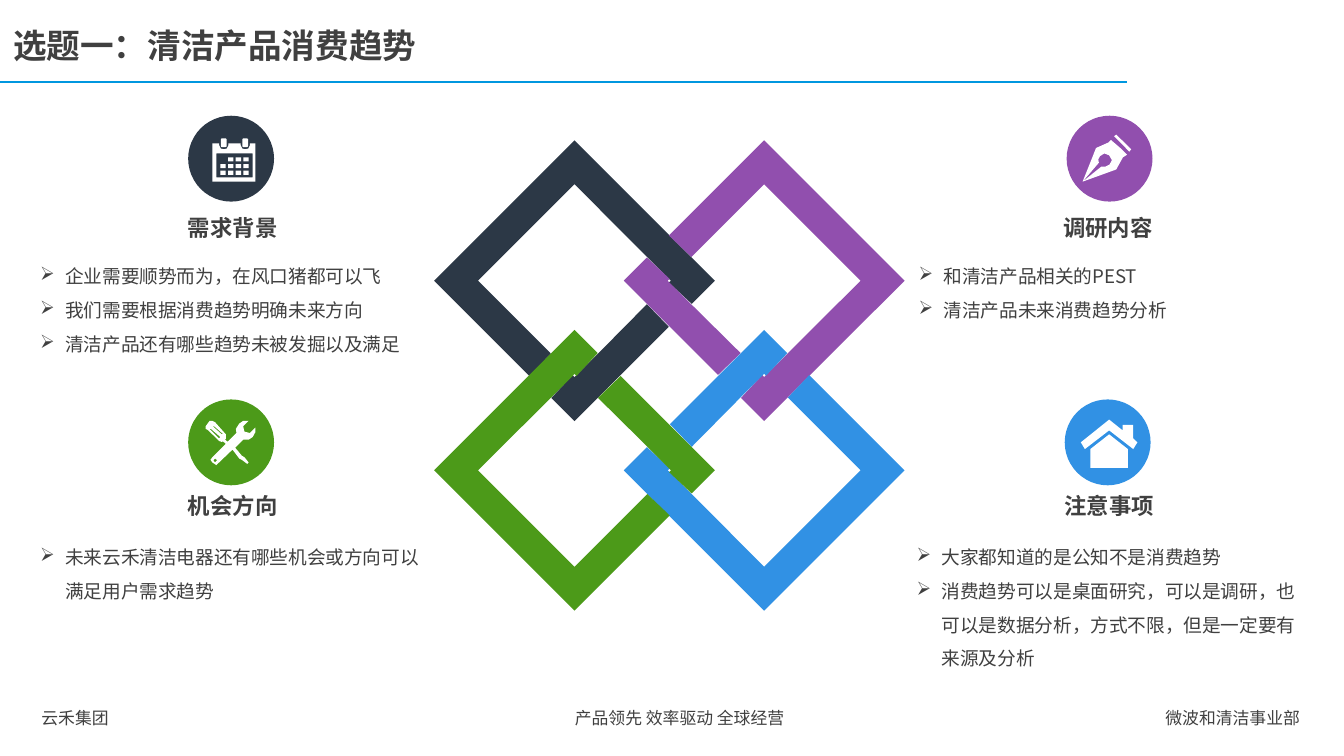
from lxml.etree import SubElement
from pptx import Presentation
from pptx.dml.color import RGBColor
from pptx.enum.shapes import MSO_CONNECTOR as Connector, MSO_SHAPE as Shape
from pptx.enum.text import PP_ALIGN as Align
from pptx.oxml.ns import qn
from pptx.util import Pt

FONT = "Noto Sans CJK SC"
INK, WHITE, ACCENT = "404040", "FFFFFF", "0097DF"
NAVY, PURPLE, BLUE, GREEN = "2C3846", "914FAE", "3191E4", "4C9A19"
BADGE = 46

PEN_NIB = [(28.8, 17.3), (23.8, 13), (22.3, 14.4), (15.8, 17.3), (8.6, 35.3), (17.3, 25.2),
           (17, 23.3), (18, 21.6), (20.3, 20.2), (22.8, 21.2), (24.3, 23.8), (23, 26.2),
           (20.8, 27.3), (18.7, 27.2), (8.6, 35.3), (26.6, 28.8), (30.2, 22.3), (32.4, 20.9)]
PEN_CAP = [(26.6, 10.1), (34.6, 18), (33.6, 19.2), (25.4, 11)]
HOUSE_BODY = [(13.7, 26.6), (13.7, 36.7), (33.8, 36.7), (33.8, 26.6), (23.8, 18.7)]
HOUSE_ROOF = [(36.7, 20.9), (36.7, 13.7), (31, 13.7), (31, 16.6), (23.8, 10.8), (8.6, 23),
              (10.8, 26.6), (23.8, 16.6), (36.7, 26.6), (38.9, 23)]
TOOLS = [(9.4, 14.4), (11.5, 11.5), (13, 11.5), (14.4, 12.2), (20.2, 18.7), (20.2, 21.2),
         (19.8, 21.6), (21.2, 22.7), (25.9, 18), (25.6, 15.8), (27.4, 13), (29.5, 11.5),
         (32.4, 11.5), (29.5, 14.4), (30.2, 17.3), (33.1, 18), (36, 15.1), (36, 17.6),
         (34.6, 20.2), (32.4, 21.6), (29.5, 21.6), (25.2, 25.9), (28.8, 30.2), (30.2, 31),
         (32.4, 33.8), (31.7, 34.6), (28.8, 32.4), (27.4, 31.7), (23.8, 26.9), (16.6, 33.8),
         (15.1, 35.2), (13, 33.8), (12, 32.4), (13, 31), (20.2, 23.8), (18.7, 22.5),
         (18, 22.8), (16.6, 22.3), (10.8, 16.6), (9.4, 15.8)]
TOOL_HOLES = [[(14.4, 31.7), (13.5, 32.6), (14.4, 33.8), (15.6, 32.6)],
              [(18, 18.7), (18.7, 18.5), (13.7, 14.2), (13.4, 14.6)],
              [(16.6, 20.9), (17.3, 20.2), (12.2, 15.8), (11.5, 15.8)]]
CALENDAR = [(13, 14.8), (16.6, 14.8), (16.6, 15.8), (17.5, 17.6), (19.1, 18), (20.7, 17.6),
            (21.6, 15.8), (21.6, 14.8), (28.1, 14.8), (28.1, 15.8), (29, 17.6), (30.6, 18),
            (32.2, 17.6), (33.1, 15.8), (33.1, 14.8), (36, 14.8), (36, 35.3), (13, 35.3)]
CALENDAR_WINDOW = [(15.1, 20.2), (34.6, 20.2), (34.6, 33.1), (15.1, 33.1)]

RING_ARC = [(75.2, 0), (62.8, 12.4), (50.5, 1), (51.7, 0), (50.5, -1), (0, -51.7),
            (-51.7, 0), (-12.7, 39), (-24.2, 51), (-75.2, 0), (0, -75.2)]
RING_CORNER = [(12.4, 39.3), (1, 50.7), (0, 51.7), (-1, 50.7), (-12.4, 62.8), (0, 75.2),
               (50.5, 24.7), (38.8, 12.6)]


def rgb(color):
    """Turn a hex string into a colour."""
    return RGBColor.from_string(color)


def paint(shape, color):
    """Give a shape a plain fill without line or shadow."""
    shape.shadow.inherit = False
    shape.fill.solid()
    shape.fill.fore_color.rgb = rgb(color)
    shape.line.fill.background()


def add_preset(slide, kind, left, top, width, height, color):
    """Draw a filled preset shape."""
    paint(slide.shapes.add_shape(kind, Pt(left), Pt(top), Pt(width), Pt(height)), color)


def add_outline(slide, left, top, contours, color):
    """Draw closed contours as one filled freeform."""
    loops = [[(Pt(left + x), Pt(top + y)) for x, y in contour] for contour in contours]
    builder = slide.shapes.build_freeform(*loops[0][0])
    builder.add_line_segments(loops[0][1:], close=True)
    for loop in loops[1:]:
        builder.move_to(*loop[0])
        builder.add_line_segments(loop[1:], close=True)
    paint(builder.convert_to_shape(), color)


def add_text(slide, box, lines, size, bold=False, wrap=True, bullet=None, align=Align.LEFT):
    """Write paragraphs in a box, with bullets if a bullet sign is given."""
    frame = slide.shapes.add_textbox(*map(Pt, box)).text_frame
    frame.word_wrap = wrap
    frame.text = "\n".join(lines)
    for paragraph in frame.paragraphs:
        paragraph.alignment = align
        if bullet:
            properties = paragraph._p.get_or_add_pPr()
            properties.set("marL", str(Pt(13.5)))
            properties.set("indent", str(-Pt(13.5)))
            SubElement(properties, qn("a:buChar")).set("char", bullet)
            paragraph.line_spacing = 1.5
        for run in paragraph.runs:
            run.font.size, run.font.bold, run.font.name = Pt(size), bold, FONT
            run.font.color.rgb = rgb(INK)
            SubElement(run.font._element, qn("a:ea")).set("typeface", FONT)


def add_header(slide, left, top, width):
    """Place the title above its rule."""
    rule_y = Pt(top + 43.9)
    rule = slide.shapes.add_connector(Connector.STRAIGHT, Pt(left), rule_y, Pt(left + width), rule_y)
    rule.line.color.rgb = rgb(ACCENT)
    rule.line.width = Pt(1)
    SubElement(rule._element.spPr, qn("a:effectLst"))
    add_text(slide, (left, top + 10, 232.5, 29), ["选题一：清洁产品消费趋势"], 18, True, False)


def add_footer(slide, left, top, width):
    """Place the three footer labels."""
    add_text(slide, (left, top, 54, 18), ["云禾集团"], 9)
    add_text(slide, (left + 279.4, top, 139, 18), ["产品领先 效率驱动 全球经营"], 9, align=Align.CENTER)
    add_text(slide, (left + width - 92, top, 92, 18), ["微波和清洁事业部"], 9, align=Align.RIGHT)


def add_rings(slide, left, top, pitch=101.6, radius=75.2):
    """Interlock four diamonds, each a quarter turn on from the last."""
    contours = [RING_ARC, RING_CORNER]
    places = [(0, 0, NAVY), (1, 0, PURPLE), (1, 1, BLUE), (0, 1, GREEN)]
    for column, row, color in places:
        add_outline(slide, left + radius + column * pitch, top + radius + row * pitch, contours, color)
        contours = [[(-y, x) for x, y in contour] for contour in contours]


def draw_calendar(slide, left, top):
    """Draw a calendar on its badge."""
    add_outline(slide, left, top, [CALENDAR, CALENDAR_WINDOW], WHITE)
    for x in (17.6, 29.1):
        add_preset(slide, Shape.ROUNDED_RECTANGLE, left + x, top + 12.2, 3, 4.6, WHITE)
    for row in range(3):
        for column in range(0 if row else 1, 4):
            add_preset(slide, Shape.RECTANGLE, left + 17.3 + 4.1 * column,
                       top + 22.3 + 3.6 * row, 2.9, 2.2, WHITE)


def draw_pen(slide, left, top):
    """Draw a pen nib on its badge."""
    for part in (PEN_NIB, PEN_CAP):
        add_outline(slide, left, top, [part], WHITE)


def draw_tools(slide, left, top):
    """Draw a crossed screwdriver and spanner on their badge."""
    add_outline(slide, left, top, [TOOLS, *TOOL_HOLES], WHITE)


def draw_house(slide, left, top):
    """Draw a house on its badge."""
    for part in (HOUSE_BODY, HOUSE_ROOF):
        add_outline(slide, left, top, [part], WHITE)


def add_topic(slide, left, top, color, draw_icon, heading, heading_at, body_top, points):
    """Stack a badge, a heading and bullet points."""
    badge_left = left + 86.4
    add_preset(slide, Shape.FLOWCHART_CONNECTOR, badge_left, top, BADGE, BADGE, color)
    draw_icon(slide, badge_left, top)
    add_text(slide, (left + heading_at[0], top + heading_at[1], 63.4, 21.6), [heading], 12, True, False)
    add_text(slide, (left, top + body_top, 218.2, 24 * len(points)), points, 10, bullet="➢")


def main():
    """Build the slide."""
    deck = Presentation()
    deck.slide_width, deck.slide_height = Pt(720), Pt(405)
    slide = deck.slides.add_slide(deck.slide_layouts[6])
    add_footer(slide, 15.1, 375.8, 688.3)
    add_header(slide, 0, 0, 604)
    add_rings(slide, 232.6, 75.2)
    topics = [
        (14.4, 62, NAVY, draw_calendar, "需求背景", (79.2, 49), 70.5,
         ["企业需要顺势而为，在风口猪都可以飞", "我们需要根据消费趋势明确未来方向",
          "清洁产品还有哪些趋势未被发掘以及满足"]),
        (485, 62, PURPLE, draw_pen, "调研内容", (77.5, 49), 70.5,
         ["和清洁产品相关的PEST", "清洁产品未来消费趋势分析"]),
        (14.4, 214, GREEN, draw_tools, "机会方向", (79.2, 46), 69,
         ["未来云禾清洁电器还有哪些机会或方向可以满足用户需求趋势"]),
        (484, 214, BLUE, draw_house, "注意事项", (79.2, 46), 69,
         ["大家都知道的是公知不是消费趋势",
          "消费趋势可以是桌面研究，可以是调研，也可以是数据分析，方式不限，但是一定要有来源及分析"]),
    ]
    for topic in topics:
        add_topic(slide, *topic)
    deck.save("out.pptx")


if __name__ == "__main__":
    main()
